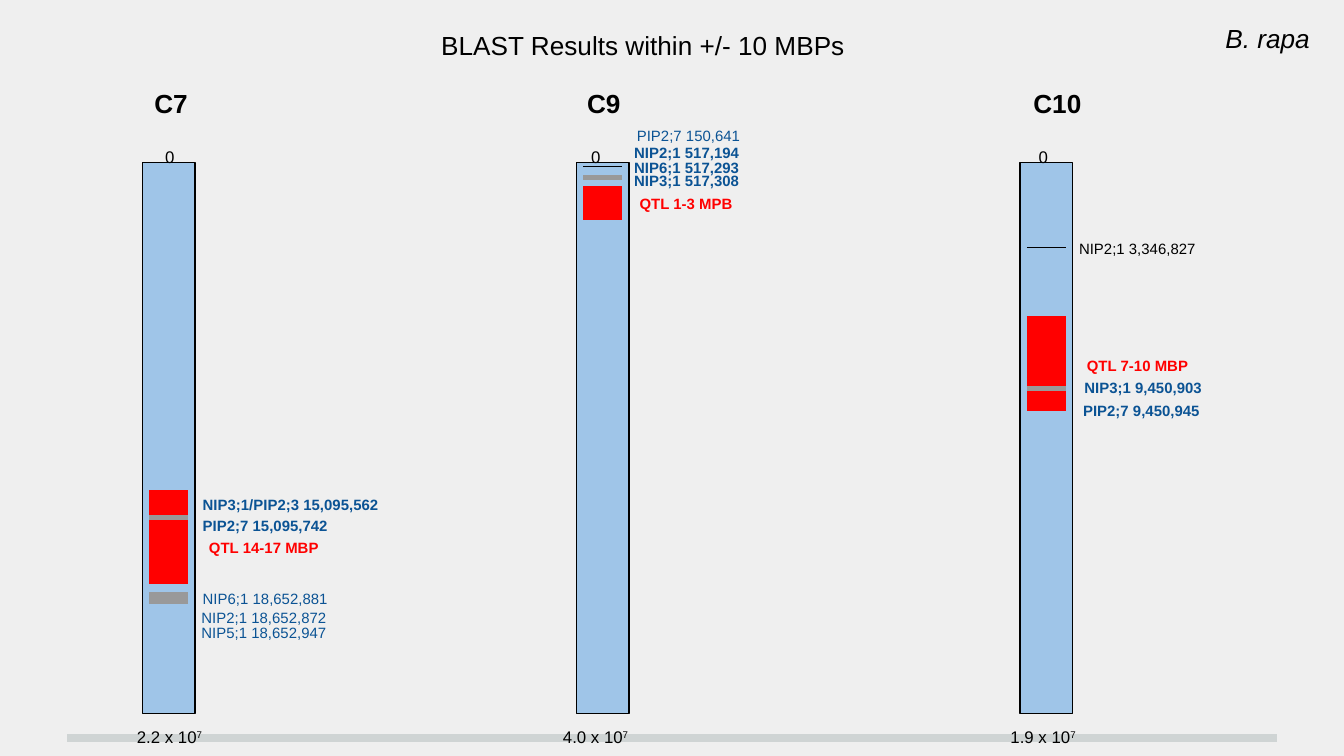
from typing import NamedTuple

from lxml.etree import SubElement
from pptx import Presentation
from pptx.dml.color import RGBColor
from pptx.enum.shapes import MSO_CONNECTOR as Connector, MSO_SHAPE as Shape
from pptx.enum.text import MSO_ANCHOR as Anchor, MSO_AUTO_SIZE as AutoSize, PP_ALIGN as Align
from pptx.oxml.ns import qn
from pptx.util import Emu, Pt

PX = 9144  # 100 px to the inch
BLACK, RED, GREY, BLUE = "000000", "FF0000", "999999", "0B5394"
BAR_TOP, BAR_WIDTH, BAR_HEIGHT = 121, 39, 410
BAND_INSET = 5
QTL, THIN, THICK, HAIR = (RED, 18), (GREY, 3), (GREY, 6), (BLACK, 0.75)


def px(*lengths):
    return [Emu(length * PX) for length in lengths]


def color(hex_code):
    return RGBColor.from_string(hex_code)


class Gene(NamedTuple):
    text: str
    box: tuple
    ink: str = BLUE
    bold: bool = True
    align: Align = Align.LEFT
    spacing: float = 1.15


class Chromosome(NamedTuple):
    name: str
    left: int
    name_box: tuple
    zero_left: int
    length: str
    length_left: int
    bands: list  # (centre y, (colour, thickness in points)), back to front
    genes: list


class MapSlide:
    font = "Arial"
    margin = 10

    def __init__(self, deck, background):
        self.slide = deck.slides.add_slide(deck.slide_layouts[5])
        fill = self.slide.background.fill
        fill.solid()
        fill.fore_color.rgb = color(background)

    def format_text(self, frame, size, ink=BLACK, bold=False, italic=False,
                    align=Align.LEFT, spacing=None):
        frame.word_wrap = True
        frame.auto_size = AutoSize.NONE
        frame.vertical_anchor = Anchor.TOP
        frame.margin_left, frame.margin_top, frame.margin_right, frame.margin_bottom = px(
            *[self.margin] * 4)
        paragraph = frame.paragraphs[0]
        paragraph.alignment = align
        if spacing:
            paragraph.line_spacing = spacing
        for run in paragraph.runs:
            run.font.name, run.font.size = self.font, Pt(size)
            run.font.bold, run.font.italic = bold, italic
            run.font.color.rgb = color(ink)

    def title(self, text, box, size):
        title = self.slide.shapes.title
        title.left, title.top, title.width, title.height = px(*box)
        title.text_frame.text = text
        self.format_text(title.text_frame, size, align=Align.CENTER)

    def label(self, text, box, size, exponent=None, **style):
        frame = self.slide.shapes.add_textbox(*px(*box)).text_frame
        frame.text = text
        if exponent:
            power = frame.paragraphs[0].add_run()
            power.text = exponent
            power.font._element.set("baseline", "30000")
        self.format_text(frame, size, **style)

    def bar(self, box, fill, outline, weight):
        bar = self.slide.shapes.add_shape(Shape.RECTANGLE, *px(*box))
        bar.shadow.inherit = False
        bar.fill.solid()
        bar.fill.fore_color.rgb = color(fill)
        bar.line.color.rgb = color(outline)
        bar.line.width = Pt(weight)

    def level_line(self, left, right, y, ink, weight):
        line = self.slide.shapes.add_connector(Connector.STRAIGHT, *px(left, y, right, y))
        line.line.color.rgb = color(ink)
        line.line.width = Pt(weight)
        SubElement(line._element.spPr, qn("a:effectLst"))

    def chromosome(self, item):
        self.bar((item.left, BAR_TOP, BAR_WIDTH, BAR_HEIGHT), "9FC5E8", BLACK, 0.75)
        self.label(item.name, item.name_box, 14, bold=True)
        self.label("0", (item.zero_left, 99, 55, 21), 9)
        self.label(item.length, (item.length_left, 531, 115, 23), 9, exponent="7")
        for y, (ink, weight) in item.bands:
            self.level_line(item.left + BAND_INSET, item.left + BAR_WIDTH - BAND_INSET,
                            y, ink, weight)
        for gene in item.genes:
            self.label(gene.text, gene.box, 8, ink=gene.ink, bold=gene.bold,
                       align=gene.align, spacing=gene.spacing)


CHROMOSOMES = [
    Chromosome(
        "C7", 106, (105, 55, 63, 30), 113, "2.2 x 10", 92,
        [(377, QTL), (400, QTL), (422, QTL), (385, THIN), (445, THICK)],
        [
            Gene("NIP3;1/PIP2;3 15,095,562", (141, 359, 194, 35), spacing=None),
            Gene("PIP2;7 15,095,742", (141, 374, 162, 35), spacing=None),
            Gene("QTL 14-17 MBP", (99, 389, 148, 35), RED, align=Align.RIGHT),
            Gene("NIP6;1 18,652,881", (141, 429, 162, 35), bold=False, spacing=None),
            Gene("NIP2;1 18,652,872", (140, 441, 215, 35), bold=False),
            Gene("NIP5;1 18,652,947", (140, 454, 162, 35), bold=False, spacing=None),
        ]),
    Chromosome(
        "C9", 429, (427, 55, 55, 30), 430, "4.0 x 10", 409,
        [(151, QTL), (132, THIN), (124, HAIR)],
        [
            Gene("PIP2;7 150,641", (464, 82, 215, 43), bold=False),
            Gene("NIP2;1 517,194", (462, 95, 215, 35)),
            Gene("NIP6;1 517,293", (462, 106, 215, 43)),
            Gene("NIP3;1 517,308", (462, 116, 215, 43)),
            Gene("QTL 1-3 MPB", (407, 133, 148, 35), RED, align=Align.RIGHT),
        ]),
    Chromosome(
        "C10", 759, (759, 55, 70, 30), 763, "1.9 x 10", 742,
        [(184, HAIR), (248, QTL), (271, QTL), (293, QTL), (289, THIN)],
        [
            Gene("NIP2;1 3,346,827", (793, 166, 215, 43), BLACK, bold=False),
            Gene("QTL 7-10 MBP", (773, 253, 121, 35), RED, align=Align.RIGHT),
            Gene("NIP3;1 9,450,903", (797, 270, 215, 43)),
            Gene("PIP2;7 9,450,945", (796, 287, 215, 43)),
        ]),
]


def main():
    deck = Presentation()
    deck.slide_width = Emu(1000 * PX)
    deck.slide_height = Emu(deck.slide_width * 9 // 16)
    page = MapSlide(deck, "EFEFEF")
    page.title("BLAST Results within +/- 10 MBPs", (200, 12, 557, 36), 14)
    page.level_line(50, 950, 549, "CFD4D4", 4)
    for item in CHROMOSOMES:
        page.chromosome(item)
    page.label("B. rapa", (902, 7, 106, 27), 14, italic=True)
    deck.save("out.pptx")


if __name__ == "__main__":
    main()
